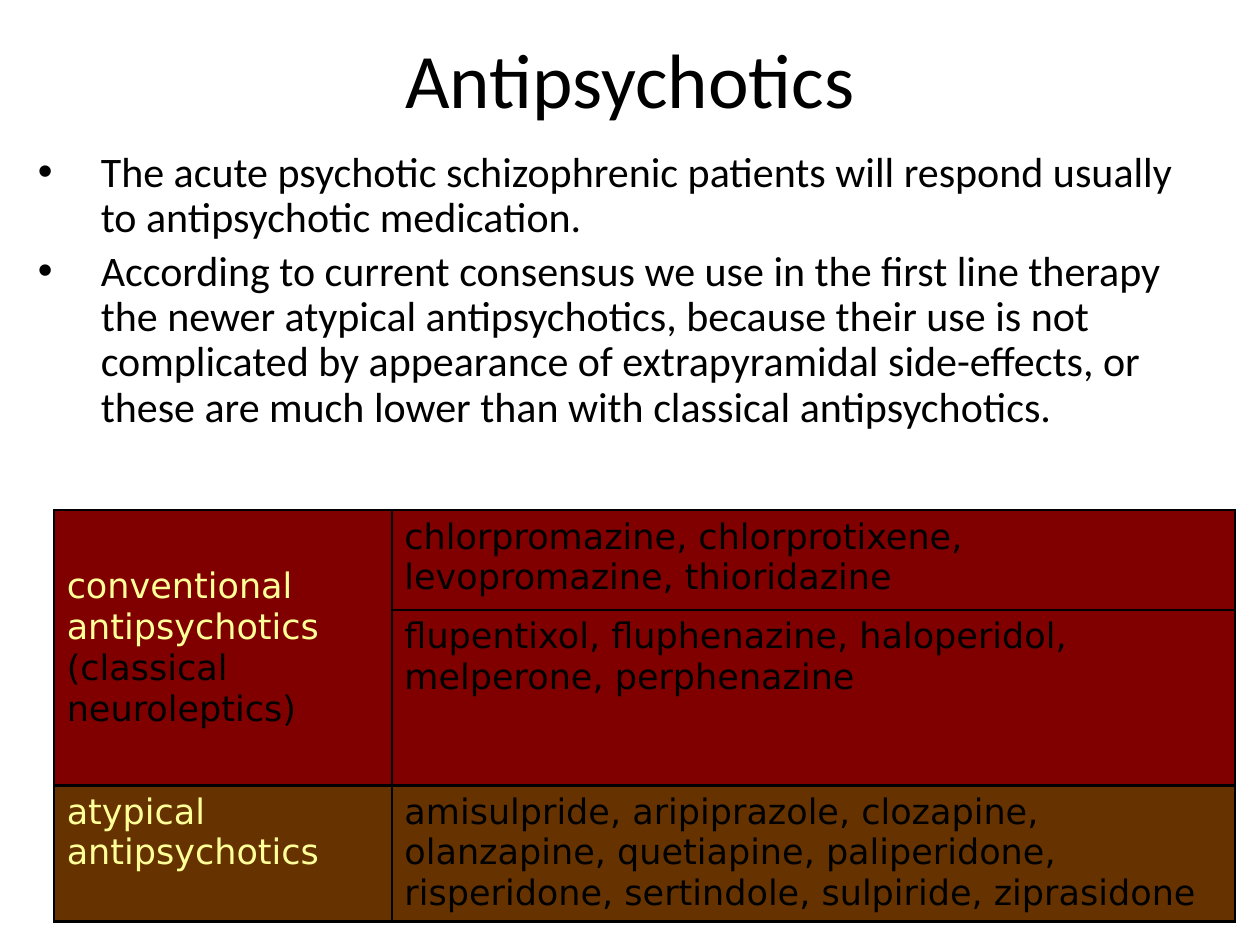
import dataclasses

import lxml.etree
import pptx
import pptx.dml.color
import pptx.enum.text
import pptx.oxml.ns
import pptx.util

RGB = pptx.dml.color.RGBColor
ANCHOR = pptx.enum.text.MSO_ANCHOR
ALIGN = pptx.enum.text.PP_ALIGN
BLACK = RGB(0x00, 0x00, 0x00)
YELLOW = RGB(0xFF, 0xFF, 0x99)
RED = RGB(0x80, 0x00, 0x00)
BROWN = RGB(0x66, 0x33, 0x00)

WIDE, HIGH = 10, 7.5
COLS = (2.68, 6.69)
ROWS = (0.79, 1.39, 1.08)


@dataclasses.dataclass
class Cell:
    row: int
    col: int
    fill: RGB
    lines: list[tuple[str, RGB]]
    anchor: ANCHOR = ANCHOR.TOP


CELLS = [
    Cell(0, 0, RED, [("conventional antipsychotics", YELLOW),
                     ("(classical neuroleptics)", BLACK)], ANCHOR.MIDDLE),
    Cell(0, 1, RED, [("chlorpromazine, chlorprotixene, levopromazine, "
                      "thioridazine", BLACK)]),
    Cell(1, 1, RED, [("flupentixol, fluphenazine, haloperidol, melperone, "
                      "perphenazine", BLACK)]),
    Cell(2, 0, BROWN, [("atypical antipsychotics", YELLOW)]),
    Cell(2, 1, BROWN, [("amisulpride, aripiprazole, clozapine, olanzapine, "
                        "quetiapine, paliperidone, risperidone, sertindole, "
                        "sulpiride, ziprasidone", BLACK)]),
]
POINTS = [
    "The acute psychotic schizophrenic patients will respond usually to "
    "antipsychotic medication.",
    "According to current consensus we use in the first line therapy the newer "
    "atypical antipsychotics, because their use is not complicated by "
    "appearance of extrapyramidal side-effects, or these are much lower than "
    "with classical antipsychotics.",
]


def write(frame, lines, size=20, font="DejaVu Sans", align=None, space=None,
          indent=None) -> None:
    """Fill a text frame with one paragraph for each (text, colour) pair."""
    for i, (text, color) in enumerate(lines):
        para = frame.add_paragraph() if i else frame.paragraphs[0]
        run = para.add_run()
        run.text = text
        run.font.size = pptx.util.Pt(size)
        run.font.name = font
        run.font.color.rgb = color
        para.alignment = align
        para.line_spacing = space
        if indent:
            props = para._p.get_or_add_pPr()
            props.set("marL", str(pptx.util.Inches(indent)))
            props.set("indent", str(-pptx.util.Inches(indent)))


def place(shape, left: float, top: float, width: float, height: float) -> None:
    """Set a shape's box, given in shares of the slide."""
    shape.left = pptx.util.Inches(left * WIDE)
    shape.top = pptx.util.Inches(top * HIGH)
    shape.width = pptx.util.Inches(width * WIDE)
    shape.height = pptx.util.Inches(height * HIGH)


def edge(cell, color: RGB = BLACK, width: float = 1.5) -> None:
    """Draw a line on all four sides of a cell."""
    props = cell._tc.get_or_add_tcPr()
    for i, side in enumerate(("lnL", "lnR", "lnT", "lnB")):
        line = lxml.etree.Element(pptx.oxml.ns.qn(f"a:{side}"),
                                  w=str(pptx.util.Pt(width)))
        fill = lxml.etree.SubElement(line, pptx.oxml.ns.qn("a:solidFill"))
        lxml.etree.SubElement(fill, pptx.oxml.ns.qn("a:srgbClr"), val=str(color))
        props.insert(i, line)


def draw(table, item: Cell) -> None:
    cell = table.cell(item.row, item.col)
    cell.vertical_anchor = item.anchor
    write(cell.text_frame, item.lines)


def main() -> None:
    deck = pptx.Presentation()
    deck.slide_width = pptx.util.Inches(WIDE)
    deck.slide_height = pptx.util.Inches(HIGH)
    slide = deck.slides.add_slide(deck.slide_layouts[1])

    # Title and list
    title, body = slide.placeholders
    place(title, 0.05, 0.01, 0.9, 0.144)
    title.text_frame.vertical_anchor = ANCHOR.MIDDLE
    write(title.text_frame, [("Antipsychotics", BLACK)], size=44,
          font="Calibri", align=ALIGN.CENTER)
    place(body, 0.02, 0.153, 0.953, 0.368)
    write(body.text_frame, [(text, BLACK) for text in POINTS], size=24,
          font="Calibri", space=0.9, indent=0.5)

    # Table of drugs
    frame = slide.shapes.add_table(len(ROWS), len(COLS), 0, 0, 0, 0)
    place(frame, 0.043, 0.54, sum(COLS) / WIDE, sum(ROWS) / HIGH)
    table = frame.table
    for col, width in zip(table.columns, COLS):
        col.width = pptx.util.Inches(width)
    for row, height in zip(table.rows, ROWS):
        row.height = pptx.util.Inches(height)
    table.cell(0, 0).merge(table.cell(1, 0))
    for row, fill in enumerate((RED, RED, BROWN)):
        for cell in table.rows[row].cells:
            cell.fill.solid()
            cell.fill.fore_color.rgb = fill
            edge(cell)
    for item in CELLS:
        draw(table, item)

    deck.save("out.pptx")


if __name__ == "__main__":
    main()
